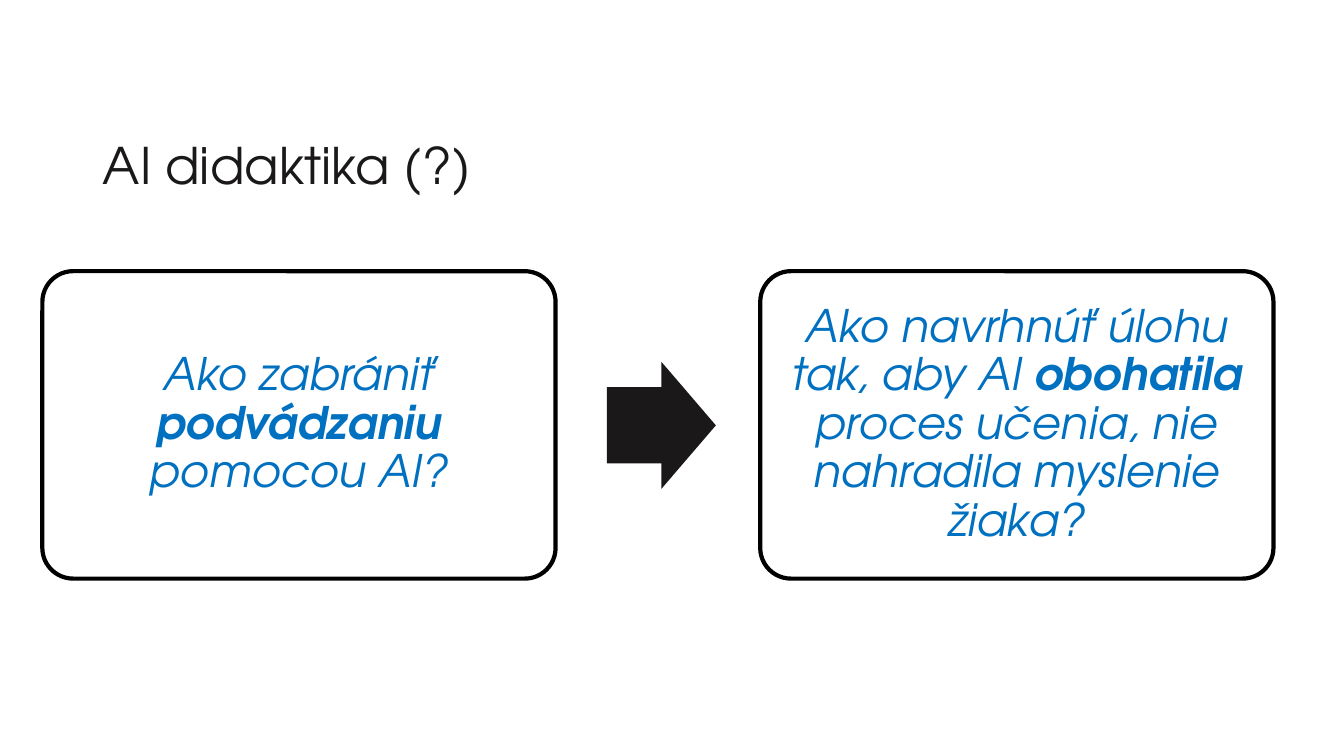
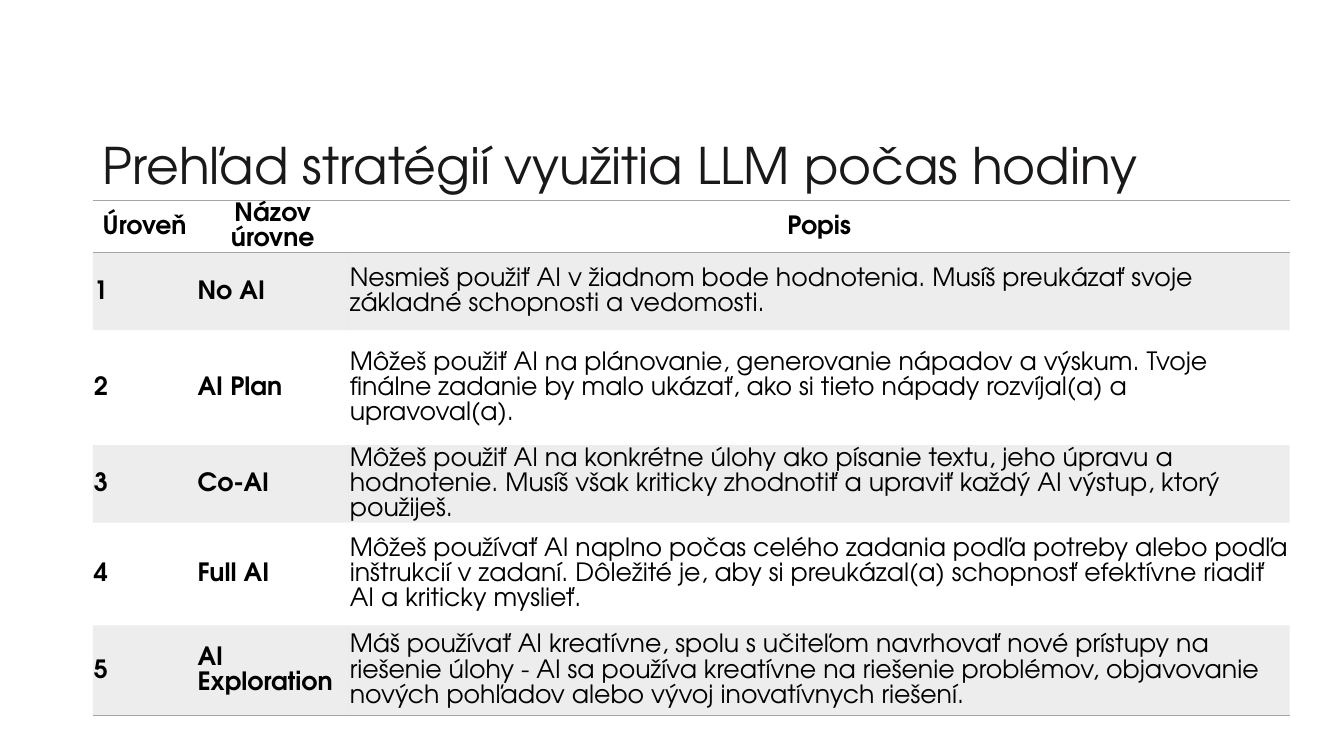
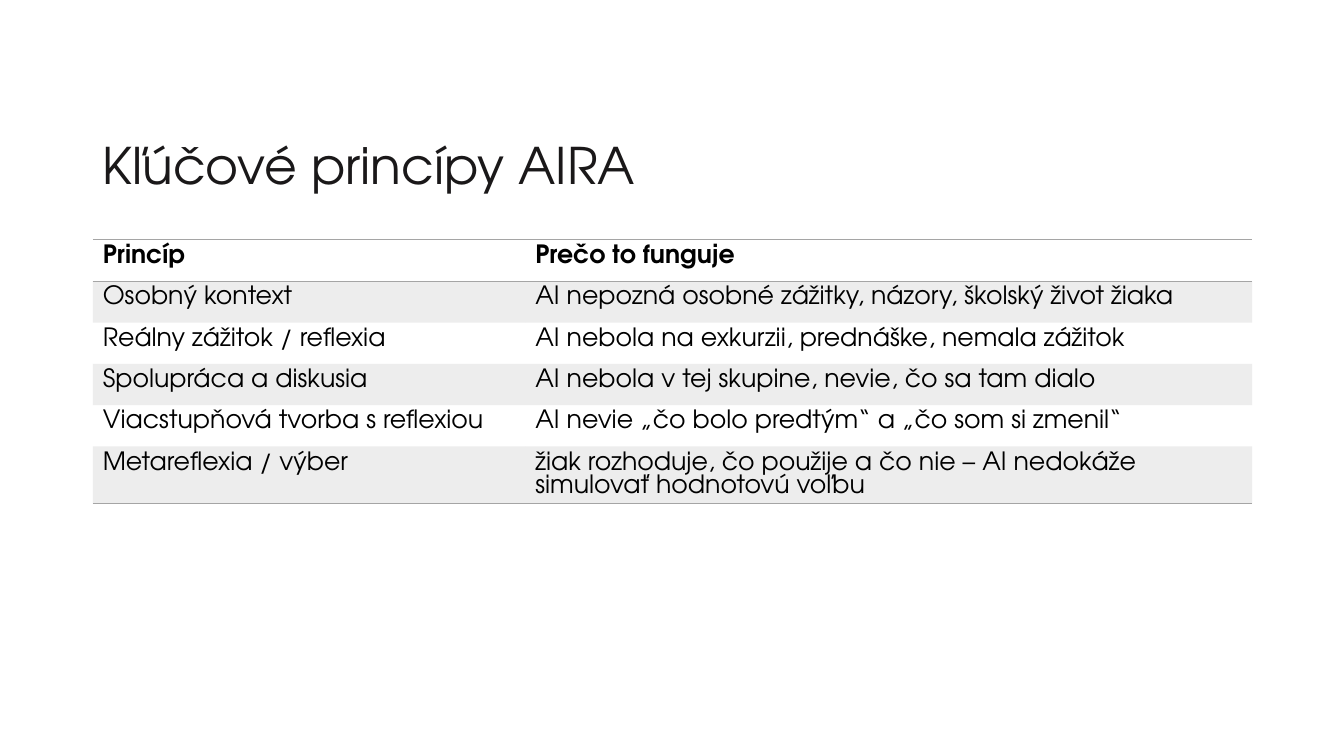
"""Build three slides on teaching with AI: a key question, usage levels and principles."""
from lxml import etree
from pptx import Presentation
from pptx.dml.color import RGBColor
from pptx.enum.shapes import MSO_SHAPE
from pptx.enum.text import MSO_ANCHOR, PP_ALIGN
from pptx.oxml.ns import qn
from pptx.util import Inches, Pt

ROUNDED, ARROW = MSO_SHAPE.ROUNDED_RECTANGLE, MSO_SHAPE.RIGHT_ARROW
MIDDLE, TOP = MSO_ANCHOR.MIDDLE, MSO_ANCHOR.TOP
LEFT, CENTER = PP_ALIGN.LEFT, PP_ALIGN.CENTER
FONT = "TeX Gyre Adventor"
INK = RGBColor(0x1A, 0x18, 0x19)
BLACK = RGBColor(0x00, 0x00, 0x00)
BLUE = RGBColor(0x00, 0x70, 0xC0)
GRAY = RGBColor(0xA5, 0xA5, 0xA5)
PLAIN_TABLE = "{2D5ABB26-0587-4C30-8999-92F81FD0307C}"
MARGIN = 0.92

prs = Presentation()
prs.slide_width, prs.slide_height = Inches(13.33), Inches(7.5)


def add_titled_slide(heading):
    slide = prs.slides.add_slide(prs.slide_layouts[5])
    title = slide.shapes.title
    title.left, title.top = Inches(MARGIN), Inches(1.11)
    title.width, title.height = Inches(11.5), Inches(1.12)
    title.text_frame.text = heading
    title.text_frame.vertical_anchor = MIDDLE
    line = title.text_frame.paragraphs[0]
    line.alignment, line.line_spacing = LEFT, 0.9
    font = line.runs[0].font
    font.name, font.size, font.color.rgb = FONT, Pt(36), INK
    return slide


def add_ruled_table(slide, top, widths, heights, rows, style):
    frame = slide.shapes.add_table(
        len(rows), len(widths), Inches(MARGIN), Inches(top),
        Inches(sum(widths)), Inches(sum(heights)))
    frame.element.find(".//" + qn("a:tableStyleId")).text = PLAIN_TABLE
    table = frame.table
    table.horz_banding = False
    for column, width in zip(table.columns, widths):
        column.width = Inches(width)
    for r, (row, height) in enumerate(zip(rows, heights)):
        table.rows[r].height = Inches(height)
        edges = {0: ("lnT", "lnB"), len(rows) - 1: ("lnB",)}.get(r, ())
        for c, words in enumerate(row):
            cell = table.cell(r, c)
            cell.text = words
            for name, value in style["cell"].items():
                setattr(cell, name, value)
            paragraph = cell.text_frame.paragraphs[0]
            paragraph.alignment = style["header_align"] if r == 0 else LEFT
            paragraph.line_spacing = style["spacing"]
            font = paragraph.runs[0].font
            font.name, font.size, font.color.rgb = FONT, Pt(18), BLACK
            font.bold = r == 0 or c < style["bold_columns"]
            properties = cell._tc.get_or_add_tcPr()
            for edge in edges:
                rule = etree.SubElement(properties, qn("a:" + edge), w=str(Pt(1)))
                ink = etree.SubElement(rule, qn("a:solidFill"))
                etree.SubElement(ink, qn("a:srgbClr"), val=str(GRAY))
            if r % 2:
                cell.fill.solid()
                cell.fill.fore_color.rgb = GRAY
                tint = properties.find(qn("a:solidFill") + "/" + qn("a:srgbClr"))
                etree.SubElement(tint, qn("a:alpha"), val="20000")
            else:
                cell.fill.background()


question_slide = add_titled_slide("AI didaktika (?)")
questions = [
    (0.42, ("Ako zabrániť ", "podvádzaniu", " pomocou AI?")),
    (7.54, ("Ako navrhnúť úlohu tak, aby AI ", "obohatila",
            " proces učenia, nie nahradila myslenie žiaka?")),
]
for left, parts in questions:
    card = question_slide.shapes.add_shape(
        ROUNDED, Inches(left), Inches(2.69), Inches(5.09), Inches(3.05))
    card.adjustments[0] = 0.1
    card.shadow.inherit = False
    card.fill.background()
    card.line.color.rgb, card.line.width = BLACK, Pt(3)
    text = card.text_frame
    text.word_wrap, text.vertical_anchor = True, MIDDLE
    for side in ("left", "right", "top", "bottom"):
        setattr(text, "margin_" + side, Inches(0.13))
    question = text.paragraphs[0]
    question.alignment, question.line_spacing = CENTER, 0.9
    for i, part in enumerate(parts):
        run = question.add_run()
        run.text = part
        run.font.name, run.font.size, run.font.color.rgb = FONT, Pt(32), BLUE
        run.font.italic, run.font.bold = True, i == 1

shift = question_slide.shapes.add_shape(
    ARROW, Inches(6.02), Inches(3.59), Inches(1.08), Inches(1.26))
shift.adjustments[0], shift.adjustments[1] = 0.6, 0.5
shift.shadow.inherit = False
shift.fill.solid()
shift.fill.fore_color.rgb = INK
shift.line.fill.background()

levels = [
    ("Úroveň", "Názov úrovne", "Popis"),
    ("1", "No AI", "Nesmieš použiť AI v žiadnom bode hodnotenia. Musíš preukázať "
     "svoje základné schopnosti a vedomosti."),
    ("2", "AI Plan", "Môžeš použiť AI na plánovanie, generovanie nápadov a výskum. "
     "Tvoje finálne zadanie by malo ukázať, ako si tieto nápady rozvíjal(a) a upravoval(a)."),
    ("3", "Co-AI", "Môžeš použiť AI na konkrétne úlohy ako písanie textu, jeho úpravu a "
     "hodnotenie. Musíš však kriticky zhodnotiť a upraviť každý AI výstup, ktorý použiješ."),
    ("4", "Full AI", "Môžeš používať AI naplno počas celého zadania podľa potreby alebo "
     "podľa inštrukcií v zadaní. Dôležité je, aby si preukázal(a) schopnosť efektívne "
     "riadiť AI a kriticky myslieť."),
    ("5", "AI Exploration", "Máš používať AI kreatívne, spolu s učiteľom navrhovať nové "
     "prístupy na riešenie úlohy - AI sa používa kreatívne na riešenie problémov, "
     "objavovanie nových pohľadov alebo vývoj inovatívnych riešení."),
]
tight = {"margin_" + side: Inches(0.01) for side in ("left", "right", "top", "bottom")}
add_ruled_table(
    add_titled_slide("Prehľad stratégií využitia LLM počas hodiny"), 1.99,
    (1.03, 1.51, 9.33), (0.51, 0.77, 1.14, 0.77, 1.02, 0.89), levels,
    {"cell": {"vertical_anchor": MIDDLE, **tight},
     "header_align": CENTER, "spacing": 1.07, "bold_columns": 2})

principles = [
    ("Princíp", "Prečo to funguje"),
    ("Osobný kontext", "AI nepozná osobné zážitky, názory, školský život žiaka"),
    ("Reálny zážitok / reflexia", "AI nebola na exkurzii, prednáške, nemala zážitok"),
    ("Spolupráca a diskusia", "AI nebola v tej skupine, nevie, čo sa tam dialo"),
    ("Viacstupňová tvorba s reflexiou", "AI nevie „čo bolo predtým“ a „čo som si zmenil“"),
    ("Metareflexia / výber", "žiak rozhoduje, čo použije a čo nie – AI nedokáže "
     "simulovať hodnotovú voľbu"),
]
add_ruled_table(
    add_titled_slide("Kľúčové princípy AIRA"), 2.38,
    (4.29, 7.21), [0.41] * len(principles), principles,
    {"cell": {"vertical_anchor": TOP},
     "header_align": LEFT, "spacing": 1.0, "bold_columns": 0})

prs.save("out.pptx")
